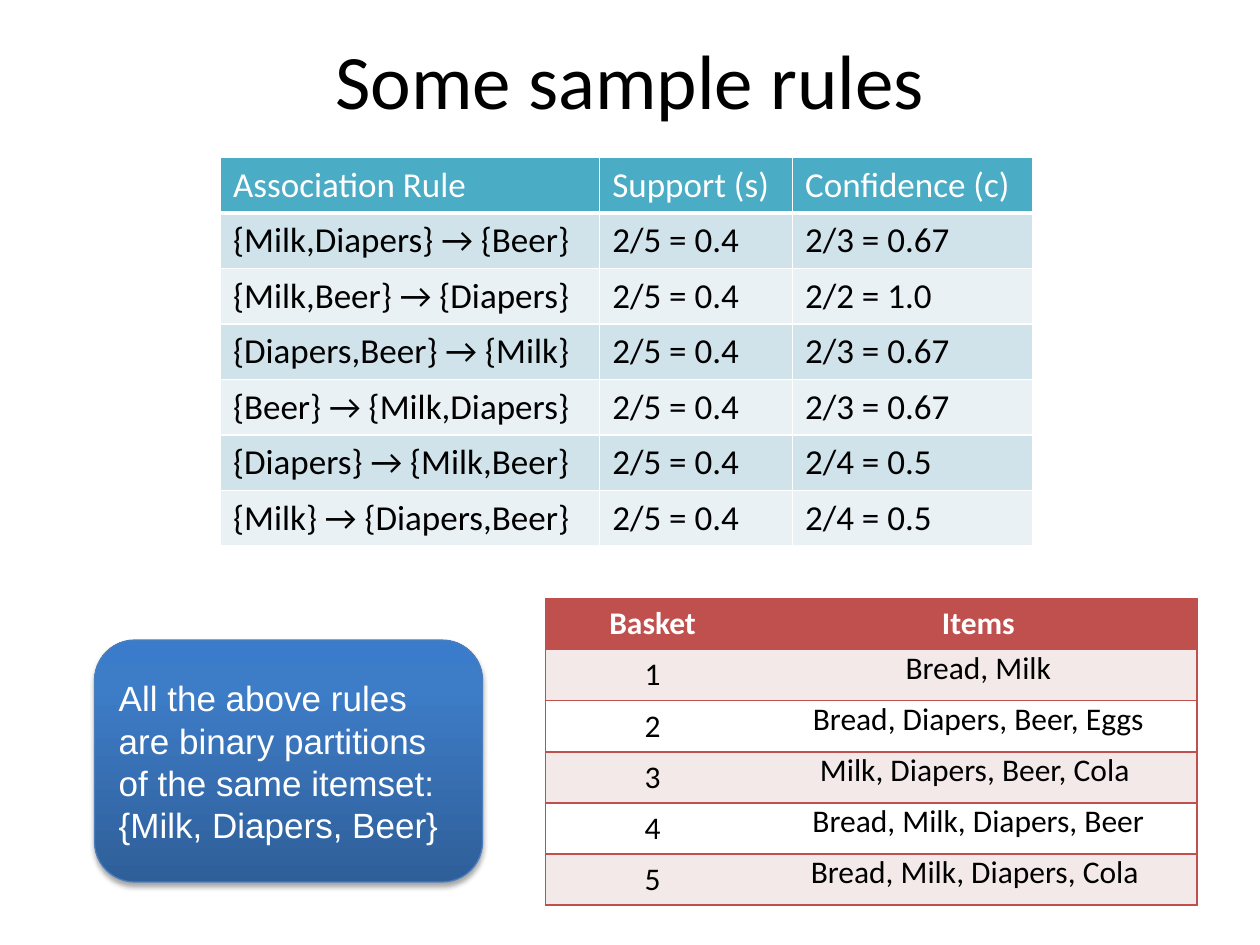
"""Build a slide of sample association rules with their support and confidence."""
from copy import deepcopy

from lxml import etree
from pptx import Presentation
from pptx.dml.color import RGBColor
from pptx.enum.shapes import MSO_SHAPE
from pptx.enum.text import MSO_ANCHOR, PP_ALIGN
from pptx.oxml.ns import qn
from pptx.util import Inches, Pt

LEFT, CENTER = PP_ALIGN.LEFT, PP_ALIGN.CENTER
MIDDLE = MSO_ANCHOR.MIDDLE
ROUNDED = MSO_SHAPE.ROUNDED_RECTANGLE
TITLE_ONLY = 5
NO_STYLE = "{2D5ABB26-0587-4C30-8999-92F81FD0307C}"

BLACK = RGBColor(0x00, 0x00, 0x00)
WHITE = RGBColor(0xFF, 0xFF, 0xFF)
TEAL = RGBColor(0x4B, 0xAC, 0xC6)
TEAL_BANDS = (RGBColor(0xD0, 0xE3, 0xEA), RGBColor(0xE9, 0xF1, 0xF5))
RED = RGBColor(0xC0, 0x50, 0x4D)
RED_BANDS = (RGBColor(0xF4, 0xE9, 0xE9), WHITE)
NOTE_LINE = RGBColor(0x4B, 0x7E, 0xBC)
NOTE_STOPS = [
    (0, RGBColor(0x2F, 0x5F, 0x99)),
    (0.8, RGBColor(0x3D, 0x7C, 0xC7)),
    (1, RGBColor(0x3A, 0x7C, 0xCB)),
]

TITLE = "Some sample rules"
RULES = [
    ("Association Rule", "Support (s)", "Confidence (c)"),
    ("{Milk,Diapers} → {Beer}", "2/5 = 0.4", "2/3 = 0.67"),
    ("{Milk,Beer} → {Diapers}", "2/5 = 0.4", "2/2 = 1.0"),
    ("{Diapers,Beer} → {Milk}", "2/5 = 0.4", "2/3 = 0.67"),
    ("{Beer} → {Milk,Diapers}", "2/5 = 0.4", "2/3 = 0.67"),
    ("{Diapers} → {Milk,Beer}", "2/5 = 0.4", "2/4 = 0.5"),
    ("{Milk} → {Diapers,Beer}", "2/5 = 0.4", "2/4 = 0.5"),
]
BASKETS = [
    ("Basket", "Items"),
    ("1", "Bread, Milk"),
    ("2", "Bread, Diapers, Beer, Eggs"),
    ("3", "Milk, Diapers, Beer, Cola "),
    ("4", "Bread, Milk, Diapers, Beer"),
    ("5", "Bread, Milk, Diapers, Cola "),
]
NOTE = "All the above rules are binary partitions of the same itemset: \v{Milk, Diapers, Beer}"


def format_text(frame, font_name, size, color, align, bold=False):
    for para in frame.paragraphs:
        para.alignment = align
        for span in para.runs:
            span.font.name = font_name
            span.font.size = Pt(size)
            span.font.color.rgb = color
            span.font.bold = bold


def set_border(cell, side, color, width):
    line = etree.SubElement(cell._tc.get_or_add_tcPr(), qn(f"a:ln{side}"), w=str(Pt(width)))
    fill = etree.SubElement(line, qn("a:solidFill"))
    etree.SubElement(fill, qn("a:srgbClr"), val=str(color))


def add_grid(page, rows, left, top, widths, height, header, bands, line, size,
             align=LEFT, bold=False, inner=True, rule=1):
    frame = page.shapes.add_table(len(rows), len(widths), Inches(left), Inches(top),
                                  Inches(sum(widths)), Inches(height))
    table = frame.table
    table._tbl.tblPr.find(qn("a:tableStyleId")).text = NO_STYLE
    for column, width in zip(table.columns, widths):
        column.width = Inches(width)
    for r, row in enumerate(rows):
        for c, text in enumerate(row):
            cell = table.cell(r, c)
            cell.text = text
            format_text(cell.text_frame, "Calibri", size, BLACK if r else WHITE,
                        align, bold and r == 0)
            if inner or c == 0:
                set_border(cell, "L", line, 1)
            if inner or c == len(row) - 1:
                set_border(cell, "R", line, 1)
            set_border(cell, "T", line, 1)
            set_border(cell, "B", line, 1 if r else rule)
            cell.fill.solid()
            cell.fill.fore_color.rgb = bands[(r - 1) % 2] if r else header
    return table


def add_note(page):
    box = page.shapes.add_shape(ROUNDED, Inches(0.75), Inches(5.08), Inches(3.08), Inches(1.92))
    box.fill.gradient()
    box.fill.gradient_angle = 90
    properties = box._element.spPr
    stop_list = properties.find(qn("a:gradFill")).find(qn("a:gsLst"))
    stop_list.append(deepcopy(stop_list[0]))
    for stop, (position, color) in zip(box.fill.gradient_stops, NOTE_STOPS):
        stop.position = position
        stop.color.rgb = color
    box.line.color.rgb = NOTE_LINE
    box.line.width = Pt(0.75)
    box.shadow.inherit = False
    shadow = etree.SubElement(properties.find(qn("a:effectLst")), qn("a:outerShdw"),
                              blurRad=str(Pt(3.1)), dist=str(Pt(1.8)), dir="5400000",
                              rotWithShape="0")
    tint = etree.SubElement(shadow, qn("a:srgbClr"), val=str(BLACK))
    etree.SubElement(tint, qn("a:alpha"), val="35000")
    box.text_frame.text = NOTE
    box.text_frame.word_wrap = True
    box.text_frame.vertical_anchor = MIDDLE
    format_text(box.text_frame, "Arial", 20, WHITE, LEFT)


def main():
    deck = Presentation()
    deck.slide_width, deck.slide_height = Inches(10), Inches(7.5)
    page = deck.slides.add_slide(deck.slide_layouts[TITLE_ONLY])

    title = page.shapes.title
    title.left, title.top = Inches(0.5), Inches(0)
    title.width, title.height = Inches(9), Inches(1.25)
    title.text_frame.text = TITLE
    title.text_frame.vertical_anchor = MIDDLE
    format_text(title.text_frame, "Calibri", 44, BLACK, CENTER)

    add_grid(page, RULES, 1.75, 1.25, (3.01, 1.53, 1.91), 3.08,
             TEAL, TEAL_BANDS, WHITE, 20, rule=3)
    baskets = add_grid(page, BASKETS, 4.33, 4.75, (1.7, 3.47), 2.43,
                       RED, RED_BANDS, RED, 18, CENTER, bold=True, inner=False)
    for r in range(1, len(BASKETS)):
        items = baskets.cell(r, 1)
        items.margin_left = items.margin_right = Inches(0.07)
        items.margin_top = items.margin_bottom = Inches(0)

    add_note(page)
    deck.save("out.pptx")


if __name__ == "__main__":
    main()
